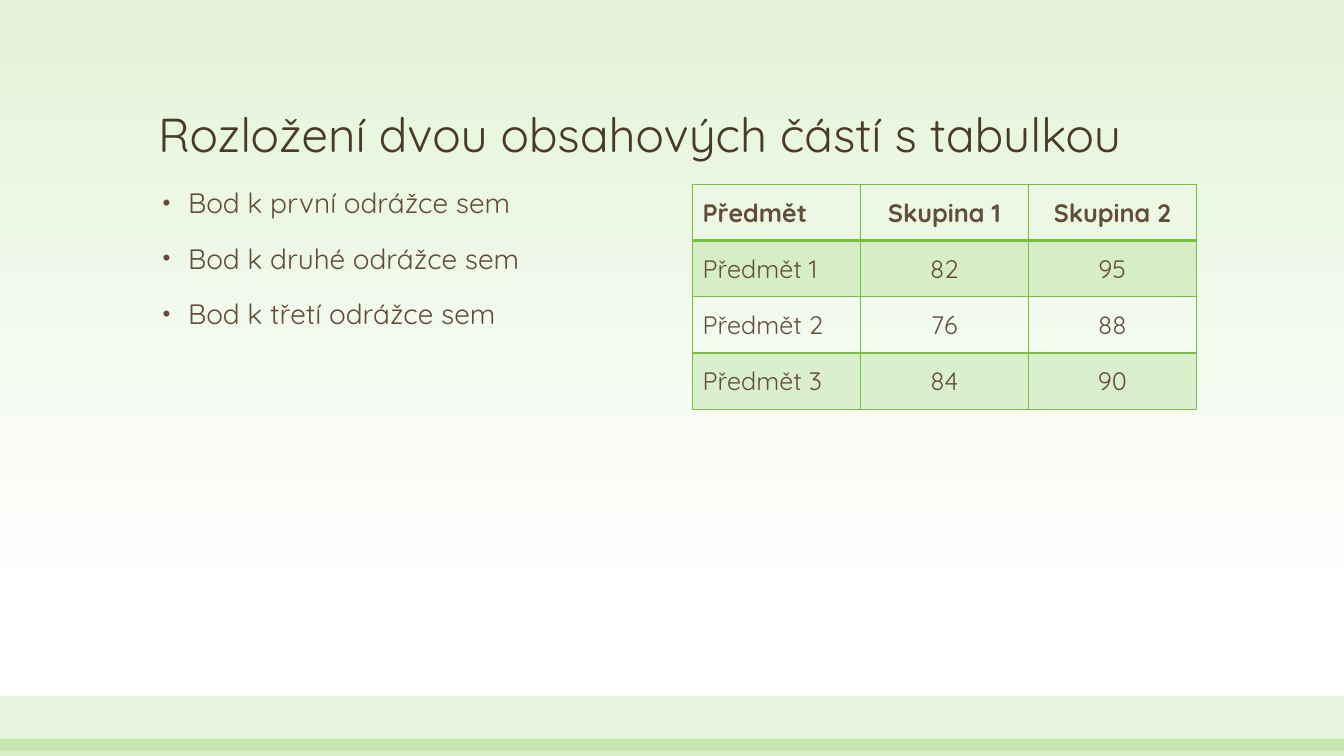
import pptx
import pptx.dml.color
import pptx.enum.shapes
import pptx.enum.text
import pptx.oxml
import pptx.oxml.ns
import pptx.util
from lxml import etree

Cm = pptx.util.Cm
Pt = pptx.util.Pt
RGBColor = pptx.dml.color.RGBColor

GREEN = RGBColor(0x72, 0xC2, 0x3C)
PALE_GREEN = RGBColor(0xE3, 0xF3, 0xD8)
WHITE = RGBColor(0xFF, 0xFF, 0xFF)
TITLE_BROWN = RGBColor(0x4A, 0x3A, 0x2A)
TEXT_BROWN = RGBColor(0x62, 0x4D, 0x38)
FONT = "Quicksand"

TITLE = "Rozložení dvou obsahových částí s tabulkou"
BULLETS = [
    "Bod k první odrážce sem",
    "Bod k druhé odrážce sem",
    "Bod k třetí odrážce sem",
]
SCORES = [
    ["Předmět", "Skupina 1", "Skupina 2"],
    ["Předmět 1", "82", "95"],
    ["Předmět 2", "76", "88"],
    ["Předmět 3", "84", "90"],
]


def style_font(paragraph, size, color, bold=False):
    font = paragraph.font
    font.name = FONT
    font.size = Pt(size)
    font.bold = bold
    font.color.rgb = color


def fill_green(fill, opacity):
    """Solid green with the given opacity in percent."""
    fill.solid()
    fill.fore_color.rgb = GREEN
    color = next(fill._xPr.iter(pptx.oxml.ns.qn("a:srgbClr")))
    etree.SubElement(color, pptx.oxml.ns.qn("a:alpha"), val=str(opacity * 1000))


def add_backdrop(slide, width, height):
    # Vertical gradient
    fill = slide.background.fill
    fill.gradient()
    fill.gradient_angle = 270
    for stop, color, position in zip(fill.gradient_stops, (PALE_GREEN, WHITE), (0, 0.79)):
        stop.color.rgb = color
        stop.position = position

    # Overlapping bands along the bottom edge
    for top, band_height, opacity in ((17.53, 1.4, 17), (18.62, 0.43, 28)):
        band = slide.shapes.add_shape(
            pptx.enum.shapes.MSO_SHAPE.RECTANGLE, 0, Cm(top), width, Cm(band_height))
        band.shadow.inherit = False
        band.line.fill.background()
        fill_green(band.fill, opacity)


def place_title(slide, left, top, width, height):
    title = slide.shapes.title
    title.left, title.top, title.width, title.height = left, top, width, height
    frame = title.text_frame
    frame.text = TITLE
    frame.auto_size = pptx.enum.text.MSO_AUTO_SIZE.NONE
    frame.vertical_anchor = pptx.enum.text.MSO_ANCHOR.BOTTOM
    heading = frame.paragraphs[0]
    heading.alignment = pptx.enum.text.PP_ALIGN.LEFT
    heading.line_spacing = 0.9
    style_font(heading, 34, TITLE_BROWN)


def add_bullets(slide, left, top, width, height):
    frame = slide.shapes.add_textbox(left, top, width, height).text_frame
    frame.word_wrap = True
    for index, text in enumerate(BULLETS):
        bullet = frame.add_paragraph() if index else frame.paragraphs[0]
        bullet.text = text
        bullet.line_spacing = 0.9
        bullet.space_before = Pt(18)
        style_font(bullet, 20, TEXT_BROWN)
        properties = bullet._p.get_or_add_pPr()
        properties.set("marL", str(Cm(0.76)))
        properties.set("indent", str(-Cm(0.64)))
        marks = (("buSzPct", {"val": "80000"}),
                 ("buFont", {"typeface": "Arial"}),
                 ("buChar", {"char": "•"}))
        following = properties.find(pptx.oxml.ns.qn("a:defRPr"))
        for tag, attributes in marks:
            following.addprevious(
                etree.Element(pptx.oxml.ns.qn(f"a:{tag}"), attributes))


def set_borders(cell, top, bottom):
    """Green borders; top and bottom are widths in points."""
    properties = cell._tc.get_or_add_tcPr()
    borders = (("lnL", 1), ("lnR", 1), ("lnT", top), ("lnB", bottom))
    for index, (side, width) in enumerate(borders):
        properties.insert(index, pptx.oxml.parse_xml(
            f'<a:{side} {pptx.oxml.ns.nsdecls("a")} w="{Pt(width)}">'
            f'<a:solidFill><a:srgbClr val="{GREEN}"/></a:solidFill></a:{side}>'))


def add_score_table(slide, left, top, width, height):
    table = slide.shapes.add_table(
        len(SCORES), len(SCORES[0]), left, top, width, height).table
    table.first_row = False
    table.horz_banding = False
    for row, values in enumerate(SCORES):
        for column, value in enumerate(values):
            cell = table.cell(row, column)
            cell.text = value
            cell.vertical_anchor = pptx.enum.text.MSO_ANCHOR.MIDDLE
            entry = cell.text_frame.paragraphs[0]
            if column:
                entry.alignment = pptx.enum.text.PP_ALIGN.CENTER
            style_font(entry, 18, TEXT_BROWN, bold=row == 0)
            # Every other row is tinted
            if row % 2:
                fill_green(cell.fill, 20)
            else:
                cell.fill.background()
            # The rule under the header is thicker
            set_borders(cell, top=2 if row == 1 else 1, bottom=2 if row == 0 else 1)


def main():
    presentation = pptx.Presentation()
    presentation.slide_width = Cm(33.87)
    presentation.slide_height = Cm(19.05)
    slide = presentation.slides.add_slide(presentation.slide_layouts[5])

    left, content_top = Cm(3.73), Cm(4.65)
    column_width = Cm(12.7)
    add_backdrop(slide, presentation.slide_width, presentation.slide_height)
    place_title(slide, left, Cm(1.22), Cm(26.42), Cm(3.02))
    add_score_table(slide, Cm(17.45), content_top, column_width, Cm(5.66))
    add_bullets(slide, left, content_top, column_width, Cm(12.07))
    presentation.save("out.pptx")


if __name__ == "__main__":
    main()
